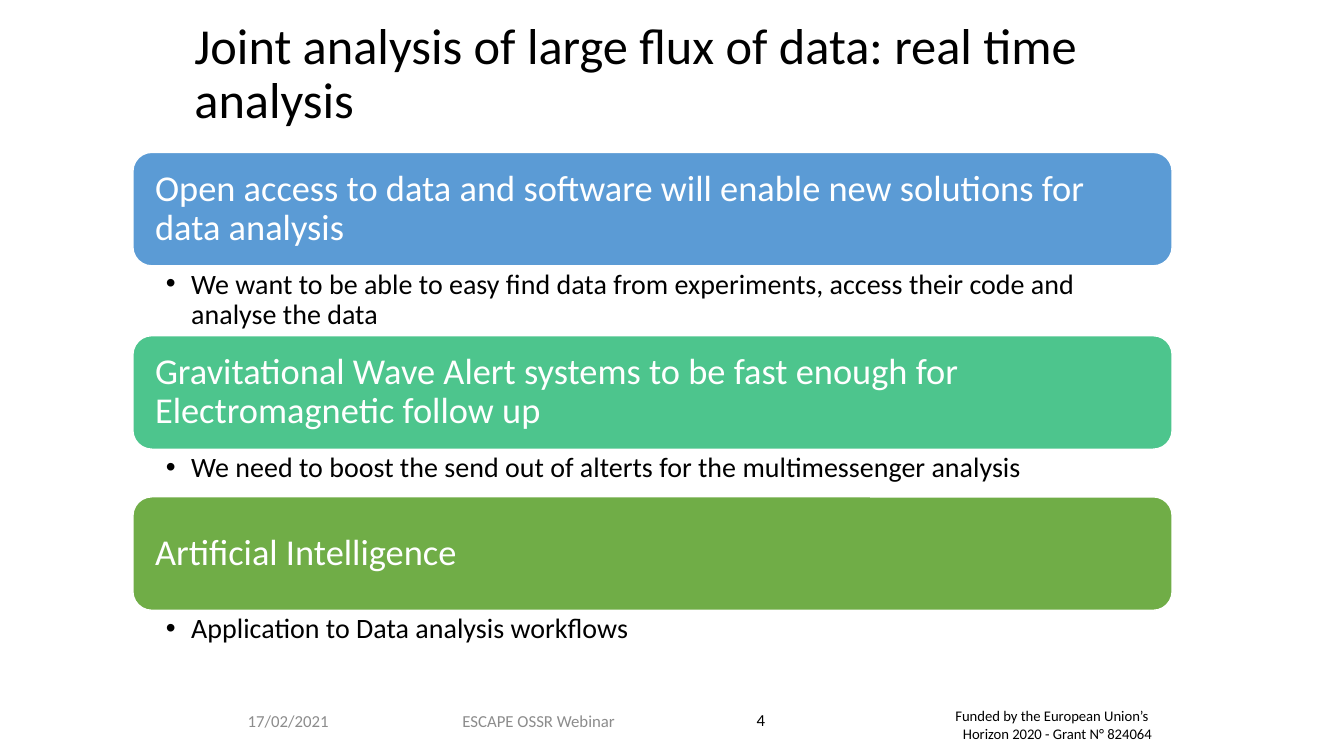
import pptx
import pptx.util
from lxml import etree
from pptx.dml.color import RGBColor
from pptx.enum.shapes import MSO_SHAPE
from pptx.enum.text import MSO_ANCHOR, PP_ALIGN
from pptx.oxml.ns import qn
from pptx.util import Cm, Pt

BLACK = RGBColor(0x00, 0x00, 0x00)
WHITE = RGBColor(0xFF, 0xFF, 0xFF)
GRAY = RGBColor(0x8C, 0x8C, 0x8C)
BLUE = RGBColor(0x5B, 0x9B, 0xD5)
TEAL = RGBColor(0x4D, 0xC5, 0x8D)
GREEN = RGBColor(0x70, 0xAD, 0x47)
FONT = "Calibri"

TITLE = "Joint analysis of large flux of data: real time analysis"
# heading, bar colour, detail, height of detail in cm
TOPICS = [
    ("Open access to data and software will enable new solutions for data analysis", BLUE,
     "We want to be able to easy find data from experiments, access their code and analyse the data",
     1.76),
    ("Gravitational Wave Alert systems to be fast enough for Electromagnetic follow up", TEAL,
     "We need to boost the send out of alterts for the multimessenger analysis", 1.2),
    ("Artificial Intelligence", GREEN, "Application to Data analysis workflows", 1.2),
]
# text, left, top, width, height in cm, size, colour, alignment, anchor
FOOTERS = [
    ("Funded by the European Union’s \nHorizon 2020 - Grant N° 824064",
     (18.97, 17.68, 10.31, 1.14), 10.5, BLACK, PP_ALIGN.RIGHT, MSO_ANCHOR.TOP),
    ("ESCAPE OSSR Webinar", (9.68, 17.65, 7.8, 1.02), 12, GRAY, PP_ALIGN.CENTER, MSO_ANCHOR.MIDDLE),
    ("17/02/2021", (5.99, 17.65, 3.25, 1.02), 12, GRAY, PP_ALIGN.LEFT, MSO_ANCHOR.MIDDLE),
    ("4", (18.16, 17.63, 2.03, 1.02), 12, BLACK, PP_ALIGN.CENTER, MSO_ANCHOR.MIDDLE),
]
TOPIC_LEFT, TOPIC_TOP, TOPIC_WIDTH, BAR_HEIGHT = 3.35, 3.84, 26.19, 2.86


def write(shape, text, size, color, alignment=PP_ALIGN.LEFT, anchor=MSO_ANCHOR.MIDDLE,
          insets=(0.25, 0.13, 0.25, 0.13), line_spacing=None):
    """Fill a shape with text; insets are left, top, right, bottom in cm."""
    frame = shape.text_frame
    frame.text = text
    frame.word_wrap = True
    frame.vertical_anchor = anchor
    frame.margin_left, frame.margin_top, frame.margin_right, frame.margin_bottom = map(Cm, insets)
    for paragraph in frame.paragraphs:
        paragraph.alignment = alignment
        paragraph.line_spacing = line_spacing
        for run in paragraph.runs:
            run.font.name = FONT
            run.font.size = Pt(size)
            run.font.color.rgb = color


def add_bullet(paragraph):
    properties = paragraph._p.get_or_add_pPr()
    properties.set("marL", str(Cm(0.64)))
    properties.set("indent", str(-Cm(0.64)))
    etree.SubElement(properties, qn("a:buFont")).set("typeface", "Arial")
    etree.SubElement(properties, qn("a:buChar")).set("char", "•")


def add_text(slide, box, *style, **options):
    shape = slide.shapes.add_textbox(*map(Cm, box))
    write(shape, *style, **options)
    return shape


def add_bar(slide, top, heading, color):
    bar = slide.shapes.add_shape(MSO_SHAPE.ROUNDED_RECTANGLE, Cm(TOPIC_LEFT), Cm(top),
                                 Cm(TOPIC_WIDTH), Cm(BAR_HEIGHT))
    bar.shadow.inherit = False
    bar.fill.solid()
    bar.fill.fore_color.rgb = color
    bar.line.color.rgb = WHITE
    bar.line.width = Pt(1)
    write(bar, heading, 26, WHITE, insets=(0.42, 0.42, 0.42, 0.42), line_spacing=0.9)


def main():
    presentation = pptx.Presentation()
    presentation.slide_width = Cm(33.87)
    presentation.slide_height = Cm(19.05)
    slide = presentation.slides.add_slide(presentation.slide_layouts[6])

    add_text(slide, (4.65, 0.46, 27, 2.87), TITLE, 36, BLACK, line_spacing=0.9)

    top = TOPIC_TOP
    for heading, color, detail, detail_height in TOPICS:
        add_bar(slide, top, heading, color)
        top += BAR_HEIGHT
        box = add_text(slide, (TOPIC_LEFT, top, TOPIC_WIDTH, detail_height), detail, 20, BLACK,
                       anchor=MSO_ANCHOR.TOP, insets=(0.83, 0.1, 0.5, 0.1), line_spacing=0.9)
        add_bullet(box.text_frame.paragraphs[0])
        top += detail_height

    for text, box, size, color, alignment, anchor in FOOTERS:
        add_text(slide, box, text, size, color, alignment, anchor)

    presentation.save("out.pptx")


if __name__ == "__main__":
    main()
